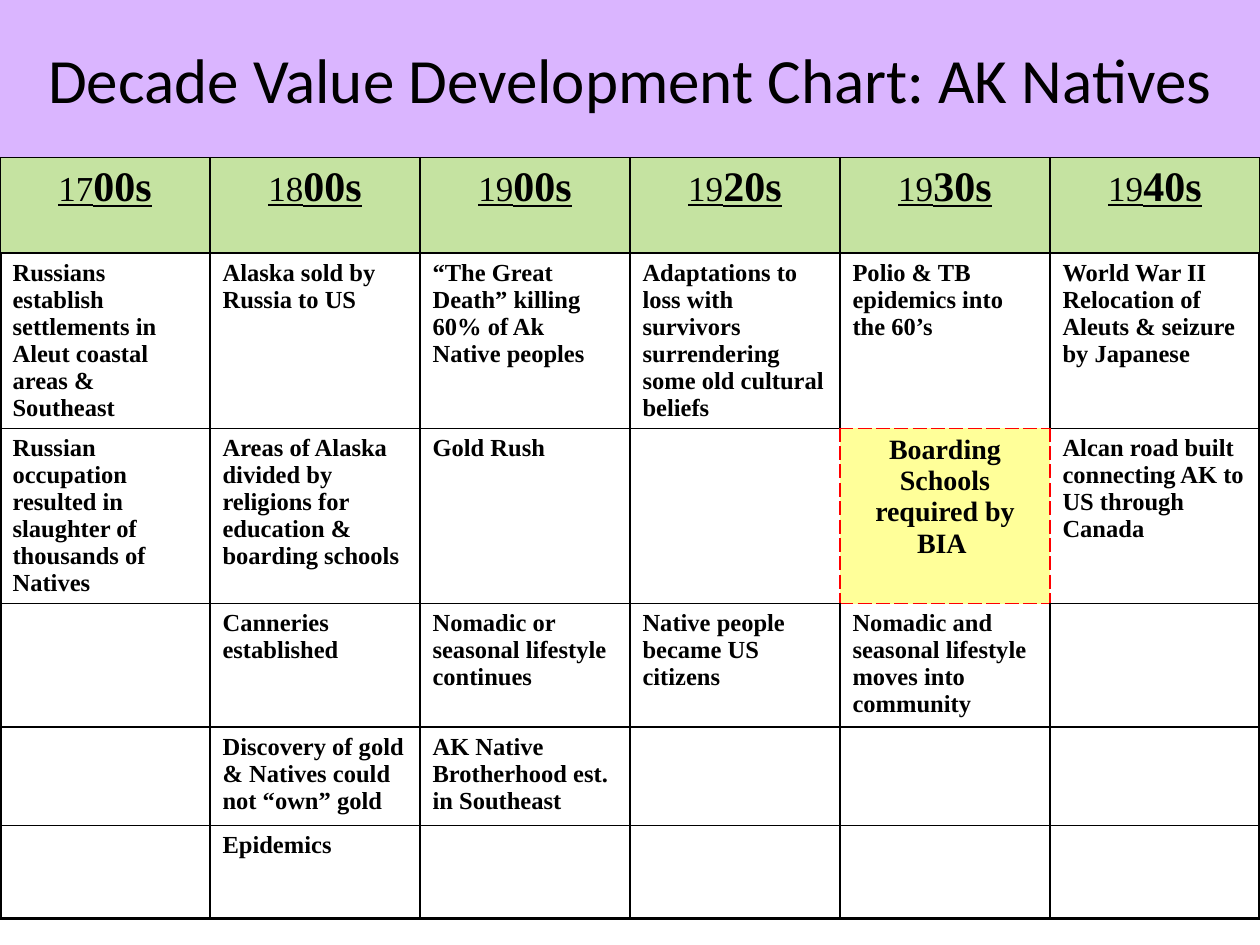
from dataclasses import dataclass

from lxml.etree import SubElement
from pptx import Presentation
from pptx.dml.color import RGBColor
from pptx.enum.shapes import MSO_SHAPE
from pptx.enum.text import MSO_ANCHOR, PP_ALIGN
from pptx.oxml.ns import qn
from pptx.util import Inches, Pt

COLORS = {
    "black": "000000",
    "title": "DAB5FF",
    "header": "C5E3A1",
    "highlight": "FFFF99",
    "dash": "FF0000",
}
TITLE_FONT = "Calibri"
TABLE_FONT = "Times New Roman"
ROW_HEIGHTS = (0.76, 1.39, 1.39, 0.98, 0.78, 0.74)
HIGHLIGHT = (2, 4)  # row and column of the boarding schools cell
EDGES = {"L": (0, -1), "R": (0, 1), "T": (-1, 0), "B": (1, 0)}


@dataclass(frozen=True)
class Span:
    text: str
    size: float
    bold: bool = True
    underline: bool = False
    font: str = TABLE_FONT


@dataclass(frozen=True)
class Decade:
    century: str
    ending: str
    events: tuple[str, ...]


DECADES = (
    Decade("17", "00s", (
        "Russians establish settlements in Aleut coastal areas & Southeast",
        "Russian occupation resulted in slaughter of thousands of Natives",
        "", "", "")),
    Decade("18", "00s", (
        "Alaska sold by Russia to US",
        "Areas of Alaska divided by religions for education & boarding schools",
        "Canneries established",
        "Discovery of gold & Natives could not “own” gold",
        "Epidemics")),
    Decade("19", "00s", (
        "“The Great Death” killing 60% of Ak Native peoples",
        "Gold Rush",
        "Nomadic or seasonal lifestyle continues",
        "AK Native Brotherhood est. in Southeast",
        "")),
    Decade("19", "20s", (
        "Adaptations to loss with survivors surrendering some old cultural beliefs",
        "",
        "Native people became US citizens",
        "", "")),
    Decade("19", "30s", (
        "Polio & TB epidemics into the 60’s",
        "Boarding Schools required by BIA",
        "Nomadic and seasonal lifestyle moves into community",
        "", "")),
    Decade("19", "40s", (
        "World War II\nRelocation of Aleuts & seizure by Japanese",
        "Alcan road built connecting AK to US through Canada",
        "", "", "")),
)


def rgb(name: str) -> RGBColor:
    return RGBColor.from_string(COLORS[name])


def add_spans(paragraph, spans: list[Span], align=PP_ALIGN.LEFT) -> None:
    paragraph.alignment = align
    for span in spans:
        run = paragraph.add_run()
        run.text = span.text
        run.font.name = span.font
        run.font.size = Pt(span.size)
        run.font.bold = span.bold
        run.font.underline = span.underline
        run.font.color.rgb = rgb("black")


def add_title(page, text: str) -> None:
    box = page.shapes.add_shape(
        MSO_SHAPE.RECTANGLE, Inches(0), Inches(0), Inches(10), Inches(1.25))
    box.shadow.inherit = False
    box.fill.solid()
    box.fill.fore_color.rgb = rgb("title")
    box.line.fill.background()
    frame = box.text_frame
    frame.word_wrap = True
    frame.vertical_anchor = MSO_ANCHOR.MIDDLE
    add_spans(frame.paragraphs[0], [Span(text, 36, bold=False, font=TITLE_FONT)],
              PP_ALIGN.CENTER)


def set_borders(cell, row: int, column: int) -> None:
    """Dash the edges of the highlighted cell; thicken the body's outer edges."""
    for side, (down, across) in EDGES.items():
        next_row, next_column = row + down, column + across
        dashed = HIGHLIGHT in ((row, column), (next_row, next_column))
        outer = (next_row == len(ROW_HEIGHTS)
                 or next_column in (-1, len(DECADES)))
        width = 2.25 if outer and row > 0 else 1
        line = SubElement(cell._tc.get_or_add_tcPr(), qn(f"a:ln{side}"),
                          w=str(Pt(width)))
        fill = SubElement(line, qn("a:solidFill"))
        SubElement(fill, qn("a:srgbClr"), val=COLORS["dash" if dashed else "black"])
        SubElement(line, qn("a:prstDash"), val="lgDash" if dashed else "solid")


def set_fill(cell, color: str | None) -> None:
    if color is None:
        cell.fill.background()
    else:
        cell.fill.solid()
        cell.fill.fore_color.rgb = rgb(color)


def write_cell(cell, row: int, column: int) -> None:
    decade = DECADES[column]
    frame = cell.text_frame
    first = frame.paragraphs[0]
    set_borders(cell, row, column)
    if row == 0:
        set_fill(cell, "header")
        add_spans(first, [Span(decade.century, 20, False, True),
                          Span(decade.ending, 24, True, True)], PP_ALIGN.CENTER)
        return
    event = decade.events[row - 1]
    if (row, column) == HIGHLIGHT:
        set_fill(cell, "highlight")
        add_spans(first, [Span(event, 16), Span(" ", 14)], PP_ALIGN.CENTER)
        return
    set_fill(cell, None)
    if event:
        for index, text in enumerate(event.split("\n")):
            paragraph = frame.add_paragraph() if index else first
            add_spans(paragraph, [Span(text, 14)])


def add_decade_table(page) -> None:
    table = page.shapes.add_table(
        len(ROW_HEIGHTS), len(DECADES), Inches(0), Inches(1.25),
        Inches(10), Inches(sum(ROW_HEIGHTS))).table
    table.first_row = False
    table.horz_banding = False
    for column in table.columns:
        column.width = Inches(10 / len(DECADES))
    for row, height in enumerate(ROW_HEIGHTS):
        table.rows[row].height = Inches(height)
        for column in range(len(DECADES)):
            write_cell(table.cell(row, column), row, column)


def main() -> None:
    deck = Presentation()
    deck.slide_width, deck.slide_height = Inches(10), Inches(7.5)
    page = deck.slides.add_slide(deck.slide_layouts[6])
    add_title(page, "Decade Value Development Chart: AK Natives")
    add_decade_table(page)
    deck.save("out.pptx")


if __name__ == "__main__":
    main()
